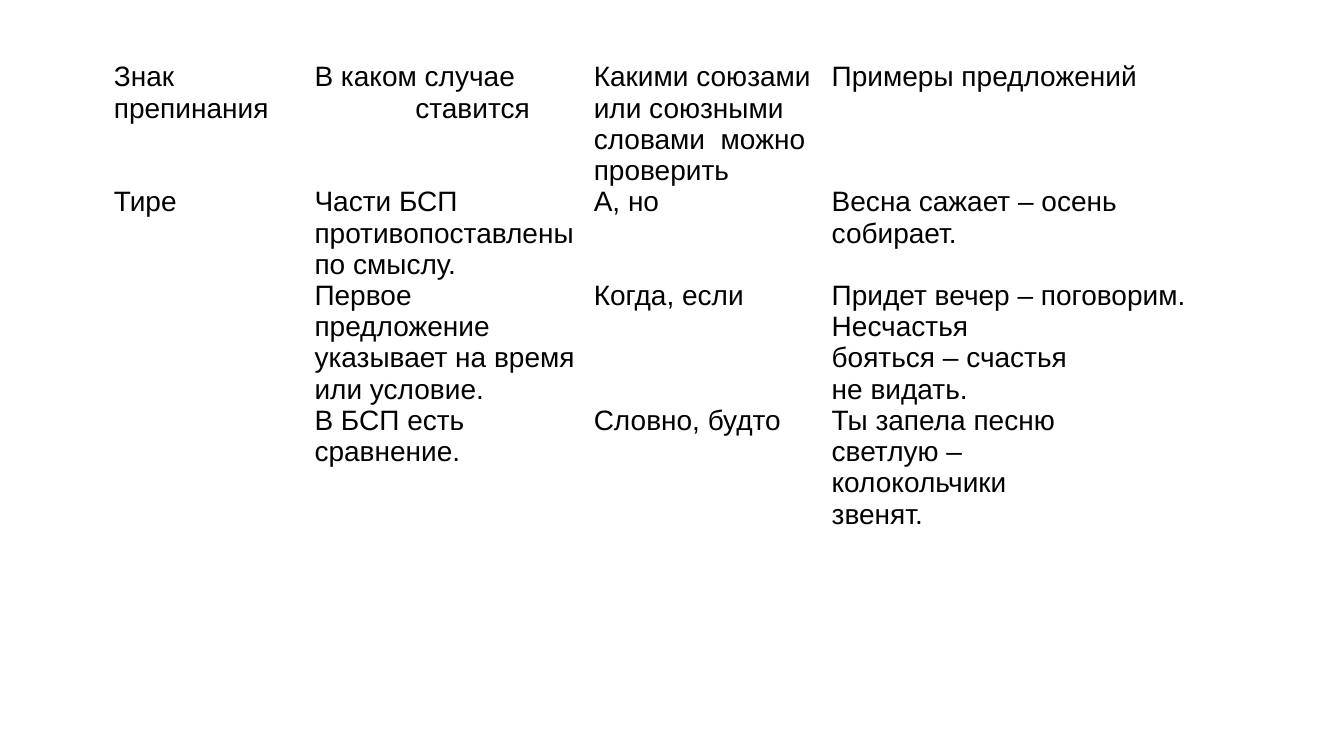
from dataclasses import dataclass

from pptx import Presentation
from pptx.dml.color import RGBColor
from pptx.enum.text import MSO_ANCHOR, PP_ALIGN
from pptx.util import Inches, Pt

TOP = MSO_ANCHOR.TOP
LEFT = PP_ALIGN.LEFT


@dataclass(frozen=True)
class Theme:
    wide: float = 13.33
    high: float = 7.5
    font: str = "Arial"
    size: int = 20
    ink: str = "000000"
    pad: float = 0.07


def write(frame, text, *, font, size, ink, inset=0):
    """Each line is a paragraph; a leading tab insets the line."""
    frame.word_wrap = True
    for i, line in enumerate(text.split("\n")):
        para = frame.paragraphs[0] if i == 0 else frame.add_paragraph()
        para.alignment = LEFT
        if line.startswith("\t"):
            para._p.get_or_add_pPr().set("marL", str(Inches(inset)))
        run = para.add_run()
        run.text = line.lstrip("\t")
        run.font.name = font
        run.font.size = Pt(size)
        run.font.color.rgb = RGBColor.from_string(ink)


class Page:
    def __init__(self, deck, theme):
        self.theme = theme
        self.slide = deck.slides.add_slide(deck.slide_layouts[6])

    def across(self, share):
        return Inches(self.theme.wide * share)

    def down(self, share):
        return Inches(self.theme.high * share)

    def table(self, rows, left, top, cols, step, inset):
        """Place a plain table; all lengths are shares of the slide."""
        look = self.theme
        table = self.slide.shapes.add_table(
            len(rows), len(cols), self.across(left), self.down(top),
            self.across(sum(cols)), self.down(step * len(rows))).table
        table.first_row = table.horz_banding = False
        for col, share in zip(table.columns, cols):
            col.width = self.across(share)
        for row, texts in zip(table.rows, rows):
            row.height = self.down(step)
            for cell, text in zip(row.cells, texts):
                cell.fill.background()
                cell.vertical_anchor = TOP
                cell.margin_left = cell.margin_right = Inches(look.pad)
                cell.margin_top = cell.margin_bottom = 0
                if text:
                    write(cell.text_frame, text, font=look.font,
                          size=look.size, ink=look.ink, inset=inset)


# Table wording
ROWS = [
    ["Знак\nпрепинания", "В каком случае\n\tставится",
     "Какими союзами\nили союзными словами  можно проверить",
     "Примеры предложений"],
    ["Тире", "Части БСП противопоставлены по смыслу.", "А, но",
     "Весна сажает – осень собирает."],
    ["", "Первое предложение указывает на время или условие.",
     "Когда, если",
     "Придет вечер – поговорим.\nНесчастья\nбояться – счастья\nне видать."],
    ["", "В БСП есть сравнение.", "Словно, будто",
     "Ты запела песню\nсветлую –\nколокольчики\nзвенят."],
]


def main():
    theme = Theme()
    deck = Presentation()
    deck.slide_width = Inches(theme.wide)
    deck.slide_height = Inches(theme.high)

    # Punctuation table
    page = Page(deck, theme)
    cols = [inch / theme.wide for inch in (1.99, 2.77, 2.36, 3.94)]
    page.table(ROWS, left=1.06 / theme.wide, top=0.61 / theme.high,
               cols=cols, step=0.87 / theme.high, inset=1)

    deck.save("out.pptx")


if __name__ == "__main__":
    main()
